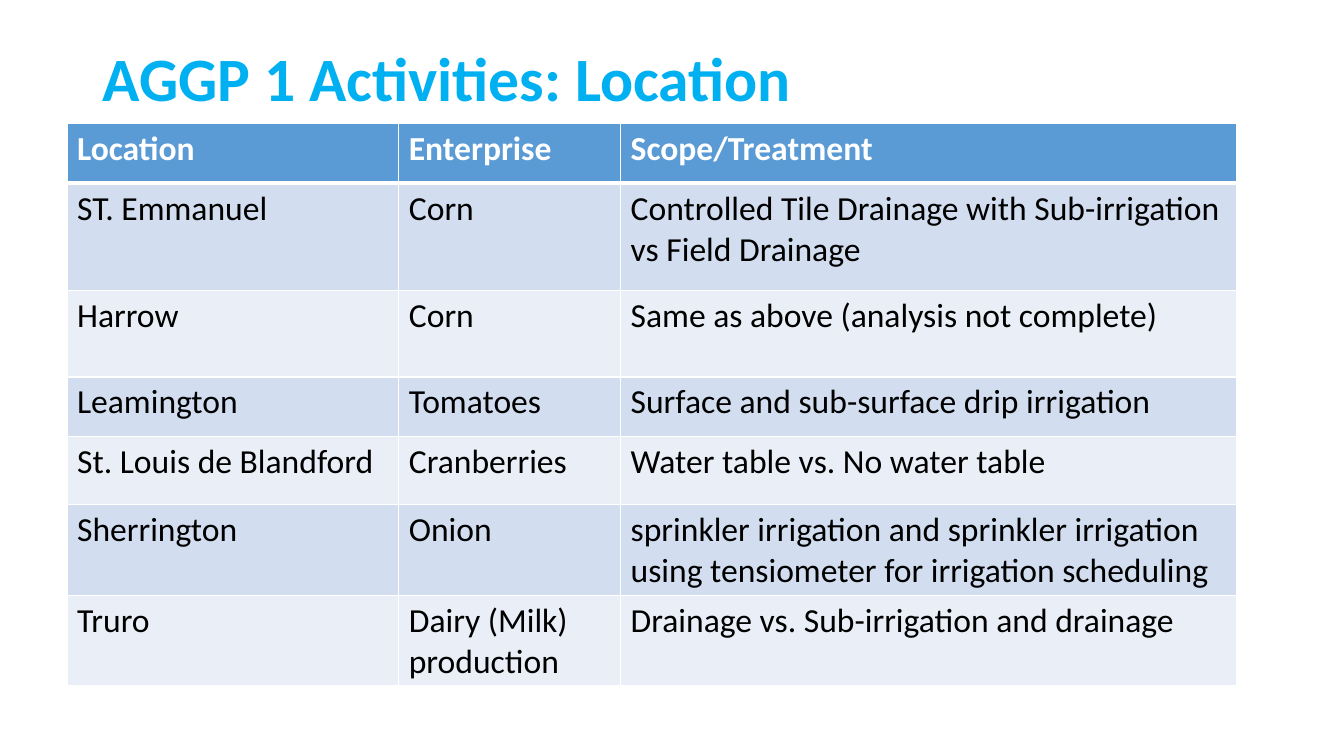
from lxml import etree
from pptx import Presentation
from pptx.dml.color import RGBColor
from pptx.enum.text import MSO_ANCHOR
from pptx.oxml.ns import qn
from pptx.util import Cm, Pt

MIDDLE = MSO_ANCHOR.MIDDLE
FONT = "Calibri"
SKY = RGBColor(0x00, 0xB0, 0xF0)
HEADER_BLUE = RGBColor(0x5B, 0x9B, 0xD5)
BAND_DARK = RGBColor(0xD2, 0xDE, 0xEF)
BAND_LIGHT = RGBColor(0xEA, 0xEF, 0xF7)
WHITE = RGBColor(0xFF, 0xFF, 0xFF)
BLACK = RGBColor(0x00, 0x00, 0x00)

COLUMN_WIDTHS = [8.36, 5.59, 15.52]
ROW_HEIGHTS = [1.5, 2.7, 2.18, 1.5, 1.71, 2.27, 2.27]
ACTIVITIES = [
    ("Location", "Enterprise", "Scope/Treatment"),
    ("ST. Emmanuel", "Corn",
     "Controlled Tile Drainage with Sub-irrigation vs Field Drainage"),
    ("Harrow", "Corn", "Same as above (analysis not complete)"),
    ("Leamington", "Tomatoes", "Surface and sub-surface drip irrigation"),
    ("St. Louis de Blandford", "Cranberries", "Water table vs. No water table"),
    ("Sherrington", "Onion",
     "sprinkler irrigation and sprinkler irrigation using tensiometer "
     "for irrigation scheduling"),
    ("Truro", "Dairy (Milk) production", "Drainage vs. Sub-irrigation and drainage"),
]


def add_run(p, text, size, color, bold):
    r = p.add_run()
    r.text = text
    r.font.name = FONT
    r.font.size = Pt(size)
    r.font.bold = bold
    r.font.color.rgb = color


def add_title(s, text):
    sp = s.shapes.add_textbox(Cm(2.34), Cm(1.02), Cm(29.21), Cm(2.08))
    tf = sp.text_frame
    tf.word_wrap = True
    tf.vertical_anchor = MIDDLE
    p = tf.paragraphs[0]
    p.line_spacing = 0.9
    add_run(p, text, 44, SKY, True)


def set_borders(cell, widths):
    """Draw white cell borders; widths maps a side (L, R, T, B) to points.

    Must run before the fill is set, since borders come first in the XML.
    """
    tcPr = cell._tc.get_or_add_tcPr()
    for side, width in widths.items():
        ln = etree.SubElement(tcPr, qn(f"a:ln{side}"), w=str(Pt(width)))
        fill = etree.SubElement(ln, qn("a:solidFill"))
        etree.SubElement(fill, qn("a:srgbClr"), val=str(WHITE))


def fill_cell(cell, text, row):
    header = row == 0
    top = 3 if row == 1 else 1
    bottom = 3 if header else 1
    set_borders(cell, {"L": 1, "R": 1, "T": top, "B": bottom})
    cell.fill.solid()
    band = BAND_DARK if row % 2 else BAND_LIGHT
    cell.fill.fore_color.rgb = HEADER_BLUE if header else band
    p = cell.text_frame.paragraphs[0]
    add_run(p, text, 24, WHITE if header else BLACK, header)


def add_activity_table(s):
    table = s.shapes.add_table(
        len(ACTIVITIES), len(COLUMN_WIDTHS), Cm(1.69), Cm(3.12),
        Cm(sum(COLUMN_WIDTHS)), Cm(sum(ROW_HEIGHTS))).table
    for column, width in zip(table.columns, COLUMN_WIDTHS):
        column.width = Cm(width)
    for row, height in zip(table.rows, ROW_HEIGHTS):
        row.height = Cm(height)
    for i, texts in enumerate(ACTIVITIES):
        for j, text in enumerate(texts):
            fill_cell(table.cell(i, j), text, i)


def main():
    prs = Presentation()
    prs.slide_width, prs.slide_height = Cm(33.87), Cm(19.05)
    s = prs.slides.add_slide(prs.slide_layouts[6])
    add_title(s, "AGGP 1 Activities: Location")
    add_activity_table(s)
    prs.save("out.pptx")


if __name__ == "__main__":
    main()
